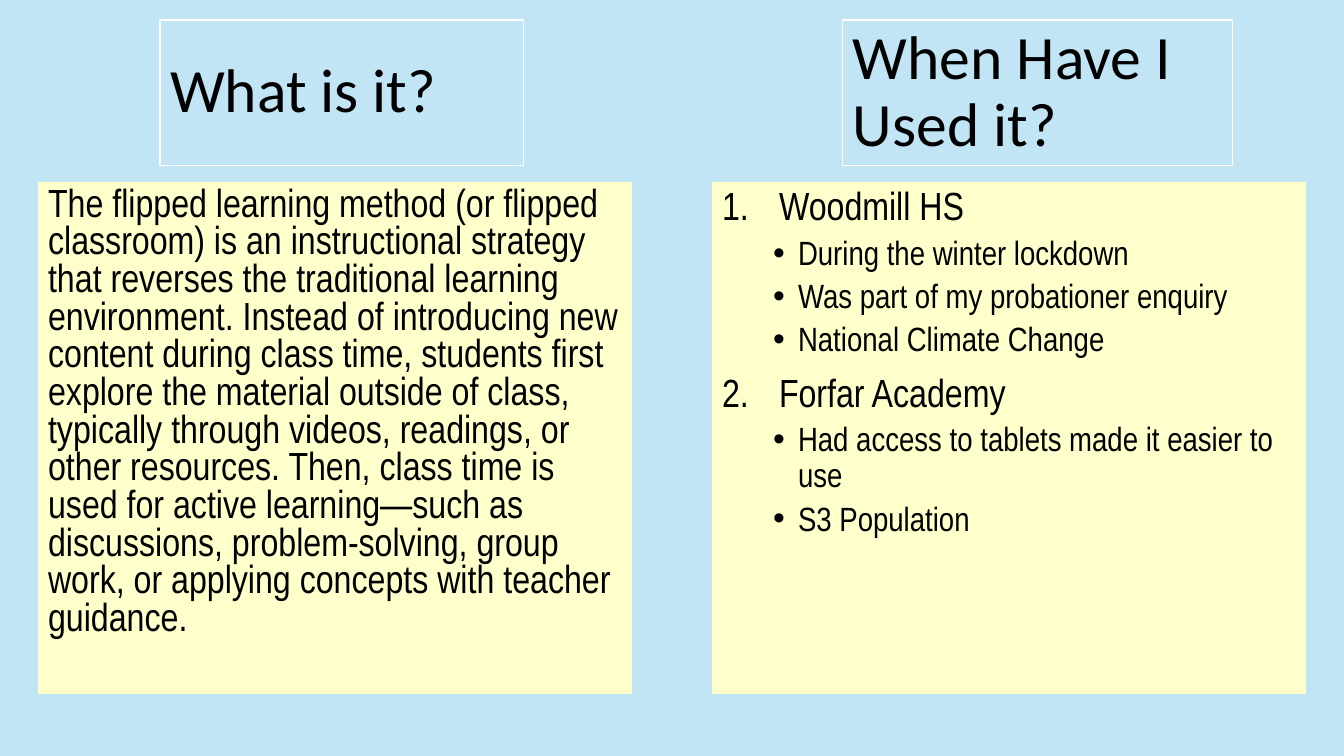
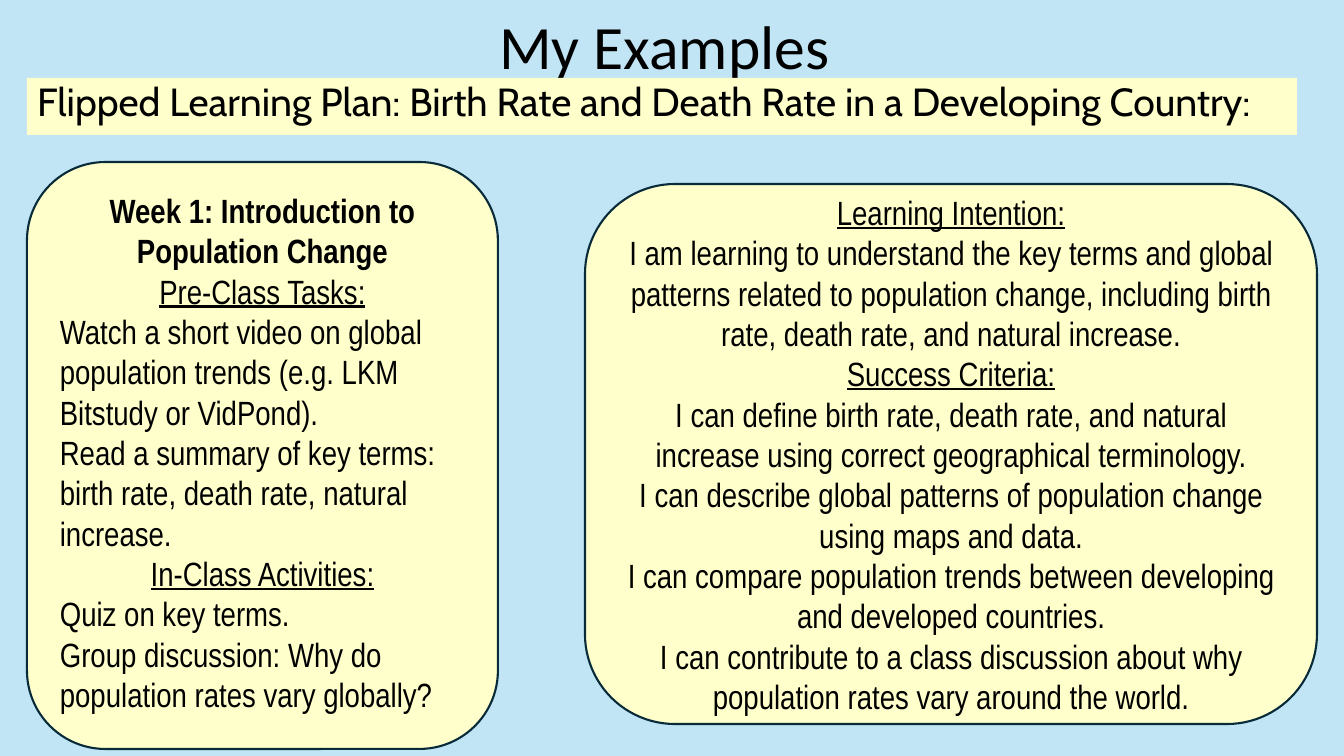
from lxml.etree import SubElement
from pptx import Presentation
from pptx.dml.color import RGBColor
from pptx.enum.shapes import MSO_SHAPE
from pptx.enum.text import MSO_ANCHOR, MSO_AUTO_SIZE, PP_ALIGN
from pptx.oxml.ns import qn
from pptx.util import Emu, Pt

PIXELS_PER_INCH = 100.8
LEFT, CENTER = PP_ALIGN.LEFT, PP_ALIGN.CENTER
TOP, MIDDLE = MSO_ANCHOR.TOP, MSO_ANCHOR.MIDDLE


def px(length):
    return Emu(round(length * 914400 / PIXELS_PER_INCH))


def color(hex_string):
    return RGBColor.from_string(hex_string)


def set_marker(para, tag, margin=0, hanging=0, **attributes):
    """Set the bullet element and hanging indent of a paragraph."""
    properties = para._p.get_or_add_pPr()
    properties.set("marL", str(px(margin)))
    properties.set("indent", str(-px(hanging)))
    SubElement(properties, qn(tag), attributes)


class LessonDeck:
    BACKGROUND = "C1E5F5"
    PANEL = "FFFFCC"
    INK = "000000"
    FRAME = "FFFFFF"
    OUTLINE = "092A39"
    TITLE_FONT = "Calibri"
    BODY_FONT = "Arial Narrow"
    BAND_FONT = "Cabin"
    TITLE_SIZE, BODY_SIZE, DETAIL_SIZE = 44, 28, 24

    def __init__(self):
        self.deck = Presentation()
        self.deck.slide_width, self.deck.slide_height = px(1344), px(756)
        self.slide = None

    def new_slide(self, layout_name):
        layout = self.deck.slide_layouts.get_by_name(layout_name)
        self.slide = self.deck.slides.add_slide(layout)
        fill = self.slide.background.fill
        fill.solid()
        fill.fore_color.rgb = color(self.BACKGROUND)

    def place(self, box, area, anchor=TOP):
        box.left, box.top, box.width, box.height = map(px, area)
        frame = box.text_frame
        frame.word_wrap = True
        frame.auto_size = MSO_AUTO_SIZE.NONE
        frame.vertical_anchor = anchor
        return frame

    def paint(self, box, fill=None, line=None, width=0.75):
        if fill:
            box.fill.solid()
            box.fill.fore_color.rgb = color(fill)
        if line:
            box.line.color.rgb = color(line)
            box.line.width = Pt(width)

    def format(self, para, font, size, spacing=1.0, before=0, align=LEFT):
        para.alignment = align
        para.line_spacing = spacing
        para.space_before = Pt(before)
        for span in para.runs:
            span.font.name = font
            span.font.size = Pt(size)
            span.font.color.rgb = color(self.INK)

    def title_text(self, box, text, area, align=LEFT, line=None):
        frame = self.place(box, area, MIDDLE)
        frame.text = text
        self.paint(box, line=line)
        self.format(frame.paragraphs[0], self.TITLE_FONT, self.TITLE_SIZE, 0.9, align=align)

    def title(self, text, area, **style):
        self.title_text(self.slide.shapes.title, text, area, **style)

    def second_title(self, text, area, **style):
        box = self.slide.shapes.add_textbox(*map(px, area))
        self.title_text(box, text, area, **style)

    def body(self, index, area):
        box = self.slide.placeholders[index]
        self.paint(box, self.PANEL)
        return self.place(box, area)

    def passage(self, text, area, font=BODY_FONT, spacing=0.9):
        frame = self.body(1, area)
        frame.text = text
        para = frame.paragraphs[0]
        set_marker(para, "a:buNone")
        self.format(para, font, self.BODY_SIZE, spacing)

    def outline(self, index, groups, area):
        """Fill a body with numbered headings and bulleted details."""
        frame = self.body(index, area)
        lines = [(text, level) for heading, details in groups
                 for text, level in [(heading, 0)] + [(detail, 1) for detail in details]]
        frame.text = "\n".join(text for text, _ in lines)
        for position, (para, (_, level)) in enumerate(zip(frame.paragraphs, lines)):
            para.level = level
            if level:
                set_marker(para, "a:buChar", 76, 25, char="•")
                size, before = self.DETAIL_SIZE, 5
            else:
                set_marker(para, "a:buAutoNum", 57, 57, type="arabicPeriod")
                size, before = self.BODY_SIZE, 10
            self.format(para, self.BODY_FONT, size, 0.9, before if position else 0)

    def card(self, lines, area, anchor=TOP, align=LEFT):
        """Draw a rounded card of (text, kind) lines; headings are centred."""
        box = self.slide.shapes.add_shape(MSO_SHAPE.ROUNDED_RECTANGLE, *map(px, area))
        box.shadow.inherit = False
        self.paint(box, self.PANEL, self.OUTLINE, 1.5)
        frame = self.place(box, area, anchor)
        frame.text = "\n".join(text for text, _ in lines)
        for para, (_, kind) in zip(frame.paragraphs, lines):
            self.format(para, self.BODY_FONT, self.DETAIL_SIZE,
                        align=align if kind == "plain" else CENTER)
            for span in para.runs:
                span.font.bold = kind == "strong"
                span.font.underline = kind == "label"

    def save(self):
        self.deck.save("out.pptx")


def add_method_slide(lesson):
    lesson.new_slide("Two Content")
    lesson.title("What is it?", (160, 20, 364, 146), line=lesson.FRAME)
    lesson.passage(
        "The flipped learning method (or flipped classroom) is an instructional strategy that "
        "reverses the traditional learning environment. Instead of introducing new content during "
        "class time, students first explore the material outside of class, typically through "
        "videos, readings, or other resources. Then, class time is used for active learning—such "
        "as discussions, problem-solving, group work, or applying concepts with teacher guidance.",
        (38, 182, 594, 512), spacing=0.8)
    lesson.second_title("When Have I Used it?", (843, 20, 390, 146), line=lesson.FRAME)
    lesson.outline(2, [
        ("Woodmill HS", ["During the winter lockdown",
                         "Was part of my probationer enquiry",
                         "National Climate Change"]),
        ("Forfar Academy", ["Had access to tablets made it easier to use",
                            "S3 Population"]),
    ], (712, 182, 594, 512))


def add_examples_slide(lesson):
    lesson.new_slide("Title and Content")
    lesson.title("My Examples", (85, 7, 1159, 85), align=CENTER)
    lesson.passage("Flipped Learning Plan: Birth Rate and Death Rate in a Developing Country:",
                   (27, 78, 1270, 57), font=lesson.BAND_FONT)
    lesson.card([
        ("Week 1: Introduction to Population Change", "strong"),
        ("Pre-Class Tasks:", "label"),
        ("Watch a short video on global population trends (e.g. LKM Bitstudy or VidPond).", "plain"),
        ("Read a summary of key terms: birth rate, death rate, natural increase.", "plain"),
        ("In-Class Activities:", "label"),
        ("Quiz on key terms.", "plain"),
        ("Group discussion: Why do population rates vary globally?", "plain"),
    ], (27, 162, 471, 587))
    lesson.card([
        ("Learning Intention:", "label"),
        ("I am learning to understand the key terms and global patterns related to population "
         "change, including birth rate, death rate, and natural increase.", "plain"),
        ("Success Criteria:", "label"),
        ("I can define birth rate, death rate, and natural increase using correct geographical "
         "terminology.", "plain"),
        ("I can describe global patterns of population change using maps and data.", "plain"),
        ("I can compare population trends between developing and developed countries.", "plain"),
        ("I can contribute to a class discussion about why population rates vary around the "
         "world.", "plain"),
    ], (585, 184, 732, 540), MIDDLE, CENTER)


def main():
    lesson = LessonDeck()
    add_method_slide(lesson)
    add_examples_slide(lesson)
    lesson.save()


if __name__ == "__main__":
    main()
